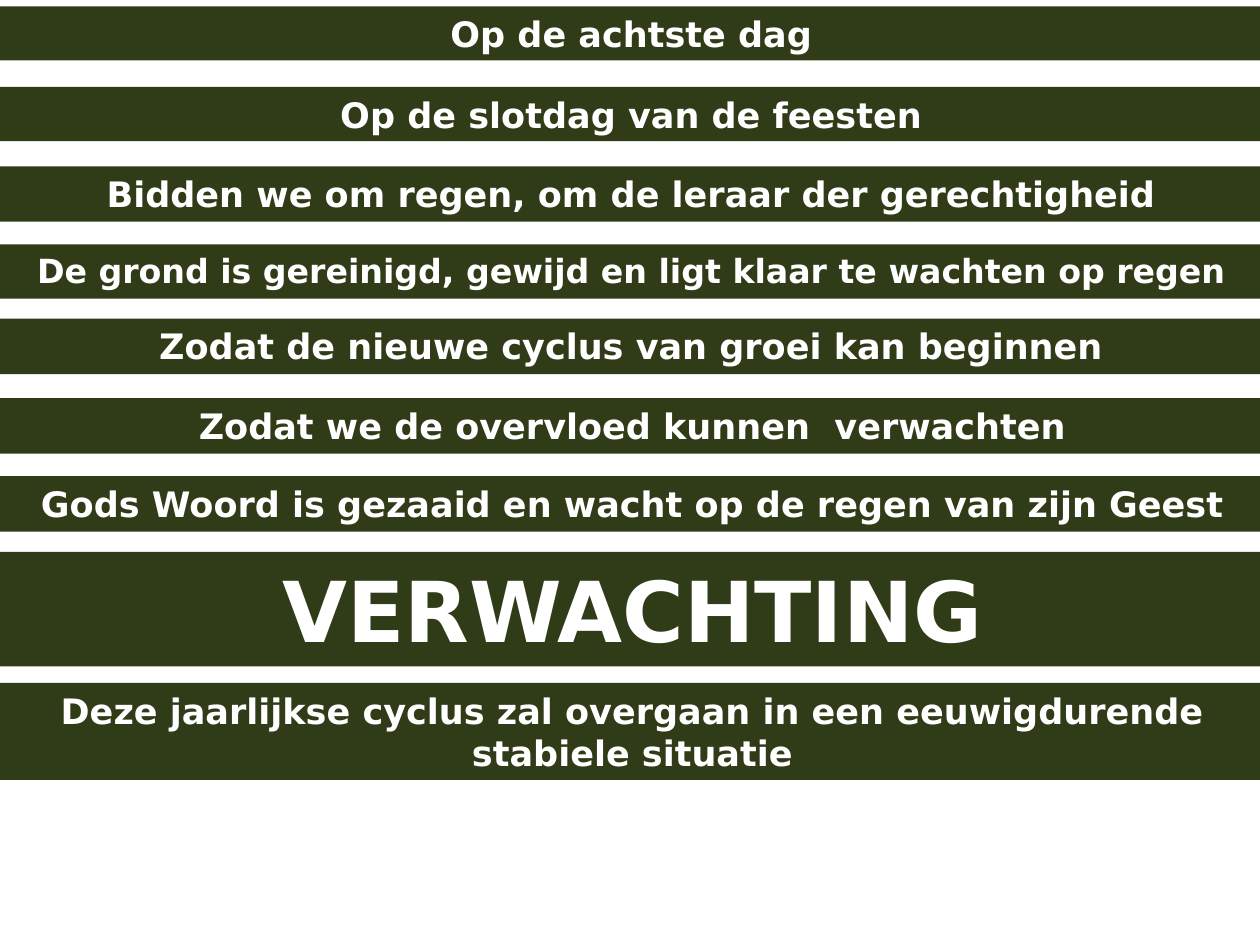
from pptx import Presentation
from pptx.dml.color import RGBColor as Color
from pptx.enum.shapes import MSO_SHAPE as Shape
from pptx.enum.text import MSO_ANCHOR as Anchor, MSO_AUTO_SIZE as AutoSize, PP_ALIGN as Align
from pptx.util import Inches, Pt

COLORS = {"band": "303C18", "text": "FFFFFF"}
FONT = "DejaVu Sans"
BANDS = [
    (0.05, 0.43, 20, "Op de achtste dag"),
    (0.69, 0.43, 20, "Op de slotdag van de feesten"),
    (1.32, 0.44, 20, "Bidden we om regen, om de leraar der gerechtigheid"),
    (1.94, 0.43, 19, "De grond is gereinigd, gewijd en ligt klaar te wachten op regen"),
    (2.53, 0.44, 20, "Zodat de nieuwe cyclus van groei kan beginnen"),
    (3.16, 0.44, 20, "Zodat we de overvloed kunnen  verwachten"),
    (3.78, 0.44, 20, "Gods Woord is gezaaid en wacht op de regen van zijn Geest"),
    (4.38, 0.91, 48, "VERWACHTING"),
    (5.42, 0.77, 20, "Deze jaarlijkse cyclus zal overgaan in een eeuwigdurende stabiele situatie"),
]


def write_text(frame, text, *, size, color, font=FONT, bold=True, align=Align.CENTER):
    para = frame.paragraphs[0]
    para.alignment = align
    span = para.add_run()
    span.text = text
    span.font.name = font
    span.font.size = Pt(size)
    span.font.bold = bold
    span.font.color.rgb = Color.from_string(color)


class BandSlide:
    def __init__(self, page, colors):
        self.page = page
        self.colors = colors

    def band(self, left, top, width, height, text, size):
        box = self.page.shapes.add_shape(
            Shape.RECTANGLE, Inches(left), Inches(top), Inches(width), Inches(height)
        )
        box.shadow.inherit = False
        box.fill.solid()
        box.fill.fore_color.rgb = Color.from_string(self.colors["band"])
        box.line.fill.background()
        frame = box.text_frame
        frame.word_wrap = True
        frame.auto_size = AutoSize.NONE
        frame.vertical_anchor = Anchor.TOP
        write_text(frame, text, size=size, color=self.colors["text"])


def main():
    deck = Presentation()
    deck.slide_width = Inches(10)
    deck.slide_height = Inches(7.5)
    slide = BandSlide(deck.slides.add_slide(deck.slide_layouts[6]), COLORS)
    for index, (top, height, size, text) in enumerate(BANDS):
        left = -0.05 if index < 5 else -0.04
        slide.band(left, top, 10.12, height, text, size)
    deck.save("out.pptx")


if __name__ == "__main__":
    main()
